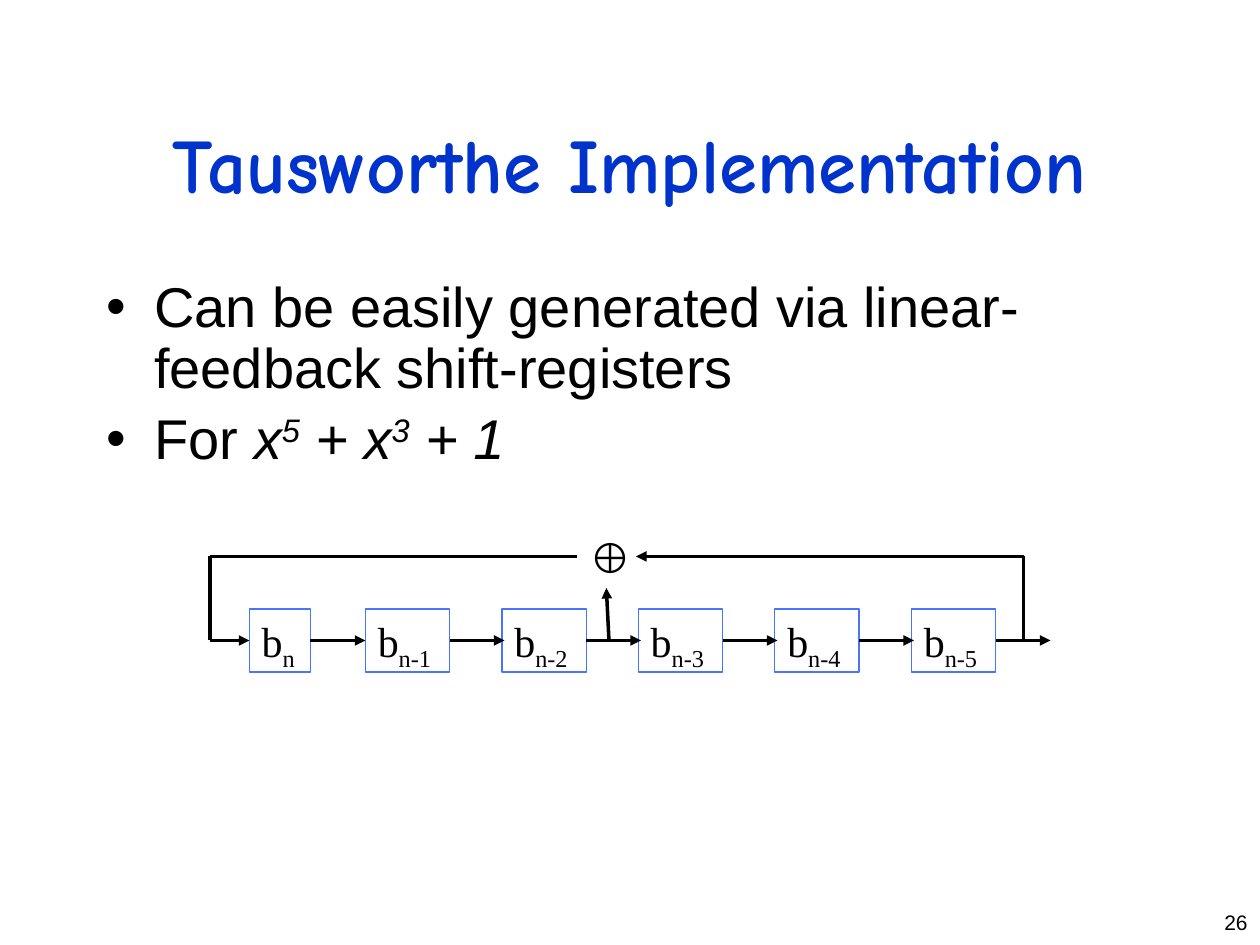
from dataclasses import dataclass

from lxml.etree import SubElement
from pptx import Presentation
from pptx.dml.color import RGBColor
from pptx.enum.shapes import MSO_CONNECTOR as Connector, MSO_SHAPE as Shape
from pptx.enum.text import MSO_ANCHOR as Anchor, MSO_AUTO_SIZE as AutoSize, PP_ALIGN as Align
from pptx.oxml.ns import qn
from pptx.util import Pt

BLACK, TITLE_BLUE, BOX_BLUE = "000000", "0033CC", "4775FF"
SANS, SERIF, COMIC = "Arial", "Times New Roman", "Comic Neue"


@dataclass
class Register:
    label: str
    left: float
    width: float

    @property
    def right(self) -> float:
        return self.left + self.width


@dataclass
class Wire:
    start: tuple[float, float]
    end: tuple[float, float]
    arrow: bool = True
    bend: int | None = None


def colour(value: str) -> RGBColor:
    return RGBColor.from_string(value)


def add_span(para, text: str, *, size: float, font: str = SANS, fill: str = BLACK,
             bold: bool = False, italic: bool = False, baseline: int = 0) -> None:
    span = para.add_run()
    span.text = text
    span.font.size = Pt(size)
    span.font.name = font
    span.font.color.rgb = colour(fill)
    span.font.bold = bold
    span.font.italic = italic
    if baseline:
        span.font._element.set("baseline", str(baseline * 1000))


def add_box(page, left: float, top: float, width: float, height: float,
            anchor=Anchor.TOP, wrap: bool = True):
    box = page.shapes.add_textbox(Pt(left), Pt(top), Pt(width), Pt(height))
    box.text_frame.word_wrap = wrap
    box.text_frame.vertical_anchor = anchor
    return box


def format_bullet(para) -> None:
    para.line_spacing = 0.9
    para.space_before = Pt(6.4)
    properties = para._p.get_or_add_pPr()
    properties.set("marL", str(Pt(27)))
    properties.set("indent", str(Pt(-27)))
    SubElement(properties, qn("a:buFont")).set("typeface", SANS)
    SubElement(properties, qn("a:buChar")).set("char", "•")


def draw_register(page, register: Register) -> None:
    box = page.shapes.add_shape(Shape.RECTANGLE, Pt(register.left), Pt(348),
                                Pt(register.width), Pt(36))
    box.shadow.inherit = False
    box.fill.background()
    box.line.color.rgb = colour(BOX_BLUE)
    box.line.width = Pt(0.75)
    frame = box.text_frame
    frame.word_wrap = False
    frame.auto_size = AutoSize.SHAPE_TO_FIT_TEXT
    frame.vertical_anchor = Anchor.TOP
    para = frame.paragraphs[0]
    para.alignment = Align.LEFT
    add_span(para, "b", size=24, font=SERIF)
    add_span(para, register.label, size=24, font=SERIF, baseline=-25)


def draw_wire(page, wire: Wire) -> None:
    kind = Connector.STRAIGHT if wire.bend is None else Connector.ELBOW
    ends = [Pt(value) for value in (*wire.start, *wire.end)]
    line = page.shapes.add_connector(kind, *ends)
    line.line.color.rgb = colour(BLACK)
    line.line.width = Pt(2)
    properties = line._element.spPr
    if wire.arrow:
        SubElement(line.line._get_or_add_ln(), qn("a:tailEnd")).set("type", "triangle")
    if wire.bend is not None:
        guides = properties.find(qn("a:prstGeom")).get_or_add_avLst()
        guide = SubElement(guides, qn("a:gd"))
        guide.set("name", "adj1")
        guide.set("fmla", f"val {wire.bend}")
    SubElement(properties, qn("a:effectLst"))


def main() -> None:
    deck = Presentation()
    deck.slide_width, deck.slide_height = Pt(720), Pt(540)
    page = deck.slides.add_slide(deck.slide_layouts[6])

    # Title
    title = add_box(page, 54, 48, 612, 90, Anchor.MIDDLE).text_frame.paragraphs[0]
    title.alignment = Align.CENTER
    add_span(title, "Tausworthe Implementation", size=44, font=COMIC,
             fill=TITLE_BLUE, bold=True)

    # Bullets
    frame = add_box(page, 54, 156, 612, 324).text_frame
    first, second = frame.paragraphs[0], frame.add_paragraph()
    for para in (first, second):
        format_bullet(para)
    add_span(first, "Can be easily generated via linear-feedback shift-registers", size=32)
    add_span(second, "For ", size=32)
    for text, baseline in (("x", 0), ("5", 30), (" + x", 0), ("3", 30), (" + 1", 0)):
        add_span(second, text, size=32, italic=True, baseline=baseline)

    # Page number
    number = add_box(page, 666, 516, 54, 24).text_frame.paragraphs[0]
    number.alignment = Align.RIGHT
    add_span(number, "26", size=12)

    # Shift registers
    registers = [Register("n", 142.5, 34.8)]
    registers += [Register(f"n-{i}", 208.8 + 78 * (i - 1), 48.2) for i in range(1, 6)]
    for register in registers:
        draw_register(page, register)

    # Exclusive-or node
    node = add_box(page, 330, 300, 33, 36, wrap=False).text_frame
    node.auto_size = AutoSize.SHAPE_TO_FIT_TEXT
    add_span(node.paragraphs[0], "⊕", size=24, font=SERIF)

    # Shift wires, then the tap and the feedback loop
    middle, loop_top, loop_left = 366, 318, 120
    head, *rest = registers
    wires = [Wire((head.right, middle), (rest[0].left, middle))]
    wires += [Wire((item.right, middle), (item.right + 31.3, middle)) for item in rest]
    wires += [
        Wire((348, middle), (346.5, 336)),
        Wire((582, middle), (363.5, loop_top), bend=-1300),
        Wire((330, loop_top), (loop_left, loop_top), arrow=False),
        Wire((loop_left, loop_top), (loop_left, middle), arrow=False),
        Wire((loop_left, middle), (head.left, middle)),
    ]
    for wire in wires:
        draw_wire(page, wire)

    deck.save("out.pptx")


if __name__ == "__main__":
    main()
